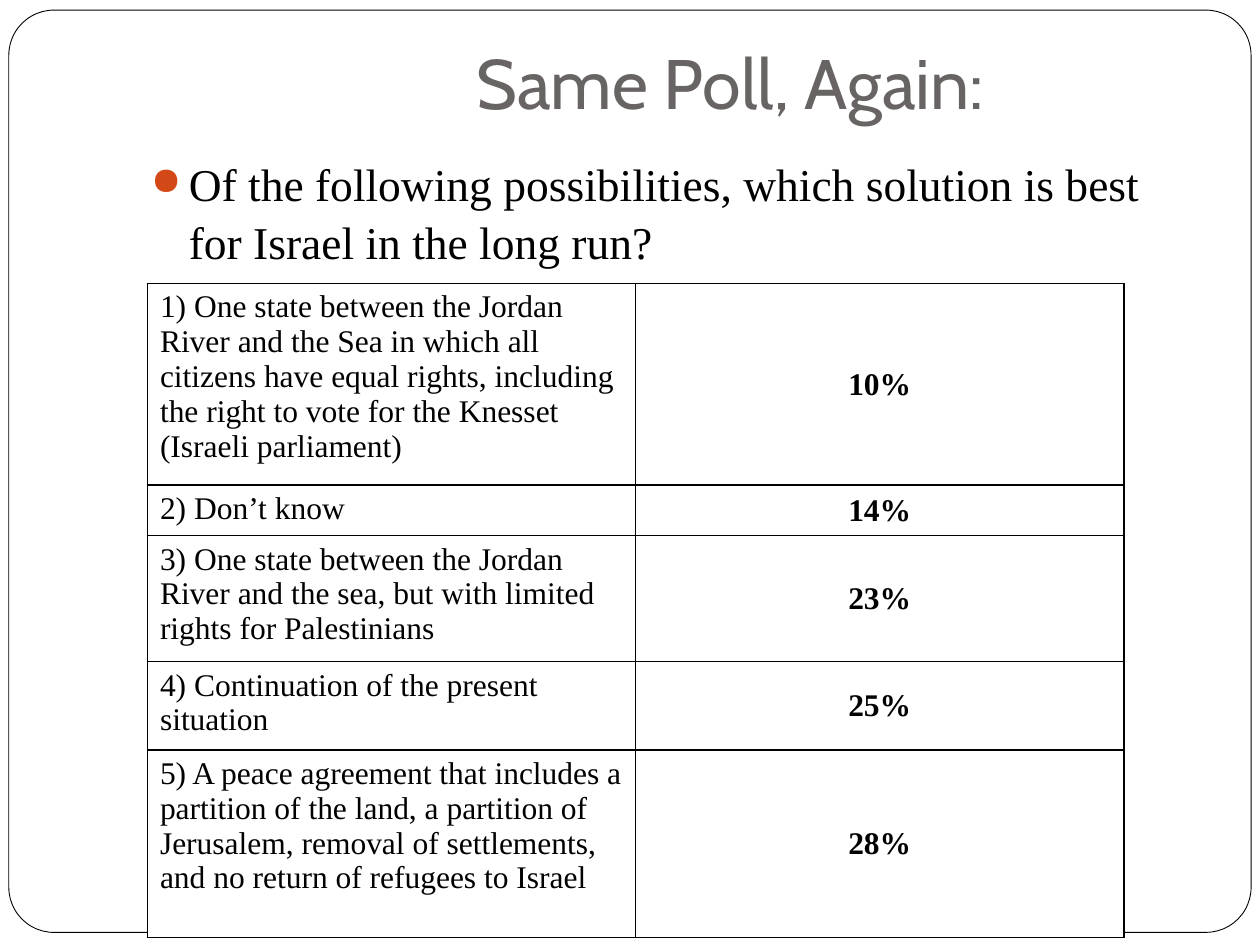
from lxml.etree import SubElement
from pptx import Presentation
from pptx.dml.color import RGBColor
from pptx.enum.shapes import MSO_SHAPE as Preset
from pptx.enum.text import MSO_ANCHOR as Anchor, PP_ALIGN as Align
from pptx.oxml import parse_xml
from pptx.oxml.ns import nsdecls, qn
from pptx.util import Inches, Pt

SERIF = "Times New Roman"
ANSWERS = [
    ("1) One state between the Jordan River and the Sea in which all citizens have equal rights, "
     "including the right to vote for the Knesset (Israeli parliament)", "10%", 1.49),
    ("2) Don’t know", "14%", 0.38),
    ("3) One state between the Jordan River and the sea, but with limited rights for Palestinians",
     "23%", 0.96),
    ("4) Continuation of the present situation", "25%", 0.65),
    ("5) A peace agreement that includes a partition of the land, a partition of Jerusalem, "
     "removal of settlements, and no return of refugees to Israel", "28%", 1.49),
]


def color(value):
    """Turn a hex string into a colour."""
    return RGBColor.from_string(value)


def add_span(para, text, size, font, ink="000000", bold=False):
    """Add one styled run to a paragraph."""
    span = para.add_run()
    span.text = text
    span.font.size = Pt(size)
    span.font.name = font
    span.font.bold = bold
    span.font.color.rgb = color(ink)


def add_text_frame(page, box, anchor):
    """Add a wrapping text box and return its frame."""
    frame = page.shapes.add_textbox(*map(Inches, box)).text_frame
    frame.word_wrap = True
    frame.vertical_anchor = anchor
    return frame


def add_border(page, box):
    """Draw the rounded page border."""
    border = page.shapes.add_shape(Preset.ROUNDED_RECTANGLE, *map(Inches, box))
    border.adjustments[0] = 0.049
    border.shadow.inherit = False
    border.fill.solid()
    border.fill.fore_color.rgb = color("FFFFFF")
    border.line.color.rgb = color("000000")
    border.line.width = Pt(0.5)


def add_title(page, box):
    """Place the centred heading at the bottom of its box."""
    frame = add_text_frame(page, box, Anchor.BOTTOM)
    frame.margin_bottom = Inches(0.1)
    para = frame.paragraphs[0]
    para.alignment = Align.CENTER
    add_span(para, "Same Poll, Again:", 40, "Cabin", "696464")


def add_question(page, box):
    """Place the bulleted poll question."""
    para = add_text_frame(page, box, Anchor.TOP).paragraphs[0]
    para.space_before = Pt(5.8)
    para.line_spacing = 1.05
    props = para._p.get_or_add_pPr()
    props.set("marL", str(Inches(0.3)))
    props.set("indent", str(-Inches(0.3)))
    SubElement(SubElement(props, qn("a:buClr")), qn("a:srgbClr"), val="D34817")
    SubElement(props, qn("a:buSzPct"), val="85000")
    SubElement(props, qn("a:buChar"), char="●")
    add_span(para, "Of the following possibilities, which solution is best for Israel in the long run?",
             26, SERIF)


def style_cell(cell):
    """Give a cell a white fill and thin black borders."""
    props = cell._tc.get_or_add_tcPr()
    for place, side in enumerate(("lnL", "lnR", "lnT", "lnB")):
        props.insert(place, parse_xml(
            f'<a:{side} {nsdecls("a")} w="{Pt(1)}"><a:solidFill>'
            f'<a:srgbClr val="000000"/></a:solidFill></a:{side}>'))
    cell.fill.solid()
    cell.fill.fore_color.rgb = color("FFFFFF")


def add_results(page, box):
    """Place the table of answers and their shares."""
    table = page.shapes.add_table(len(ANSWERS), 2, *map(Inches, box)).table
    table.first_row = table.horz_banding = False
    for column in table.columns:
        column.width = Inches(box[2] / 2)
    for row, (answer, share, height) in zip(table.rows, ANSWERS):
        row.height = Inches(height)
        answer_cell, share_cell = row.cells
        style_cell(answer_cell)
        add_span(answer_cell.text_frame.paragraphs[0], answer, 18, SERIF)
        style_cell(share_cell)
        share_cell.vertical_anchor = Anchor.MIDDLE
        para = share_cell.text_frame.paragraphs[0]
        para.alignment = Align.CENTER
        add_span(para, share, 18, SERIF, bold=True)


def main():
    """Build the poll slide and save it."""
    deck = Presentation()
    deck.slide_width, deck.slide_height = Inches(10), Inches(7.5)
    page = deck.slides.add_slide(deck.slide_layouts[6])
    add_border(page, (0.07, 0.08, 9.86, 7.32))
    add_title(page, (2.17, -0.17, 7.25, 1.25))
    add_question(page, (1.1, 1.17, 8.56, 1))
    add_results(page, (1.17, 2.25, 7.75, 4.97))
    deck.save("out.pptx")


if __name__ == "__main__":
    main()
